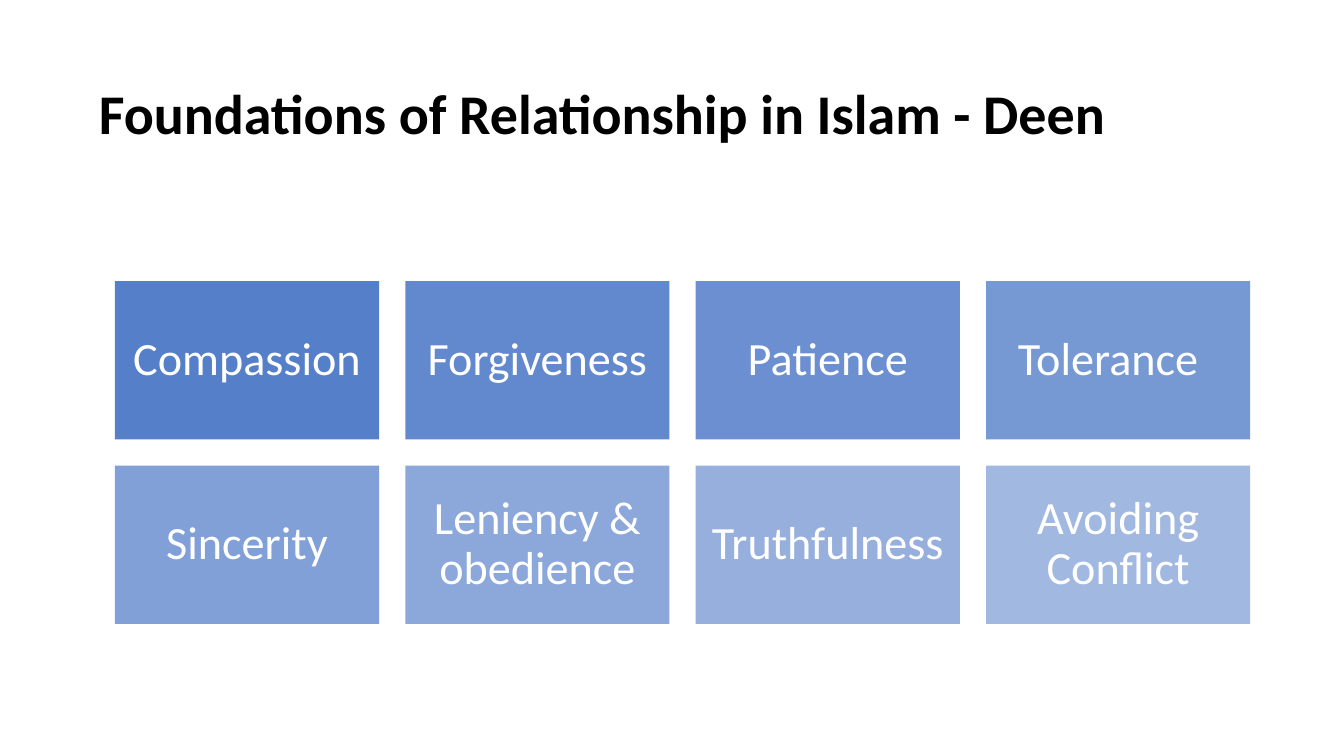
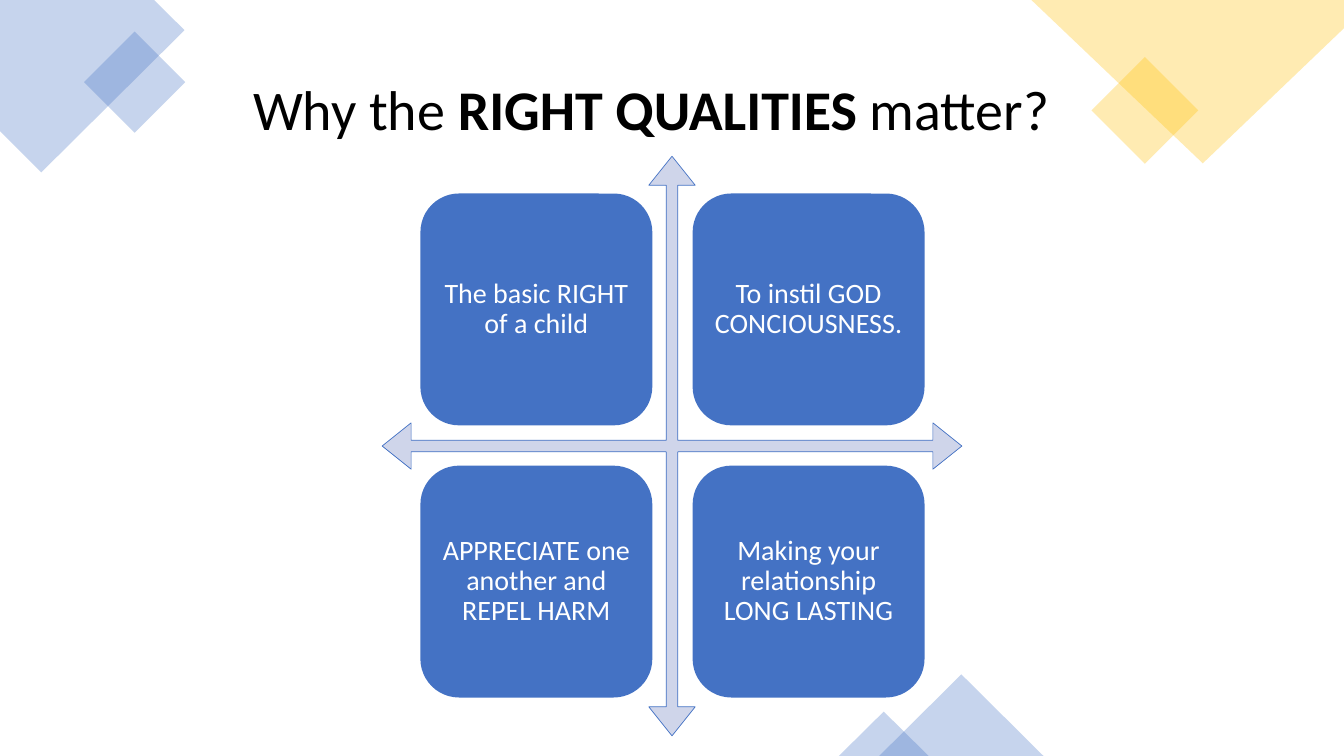
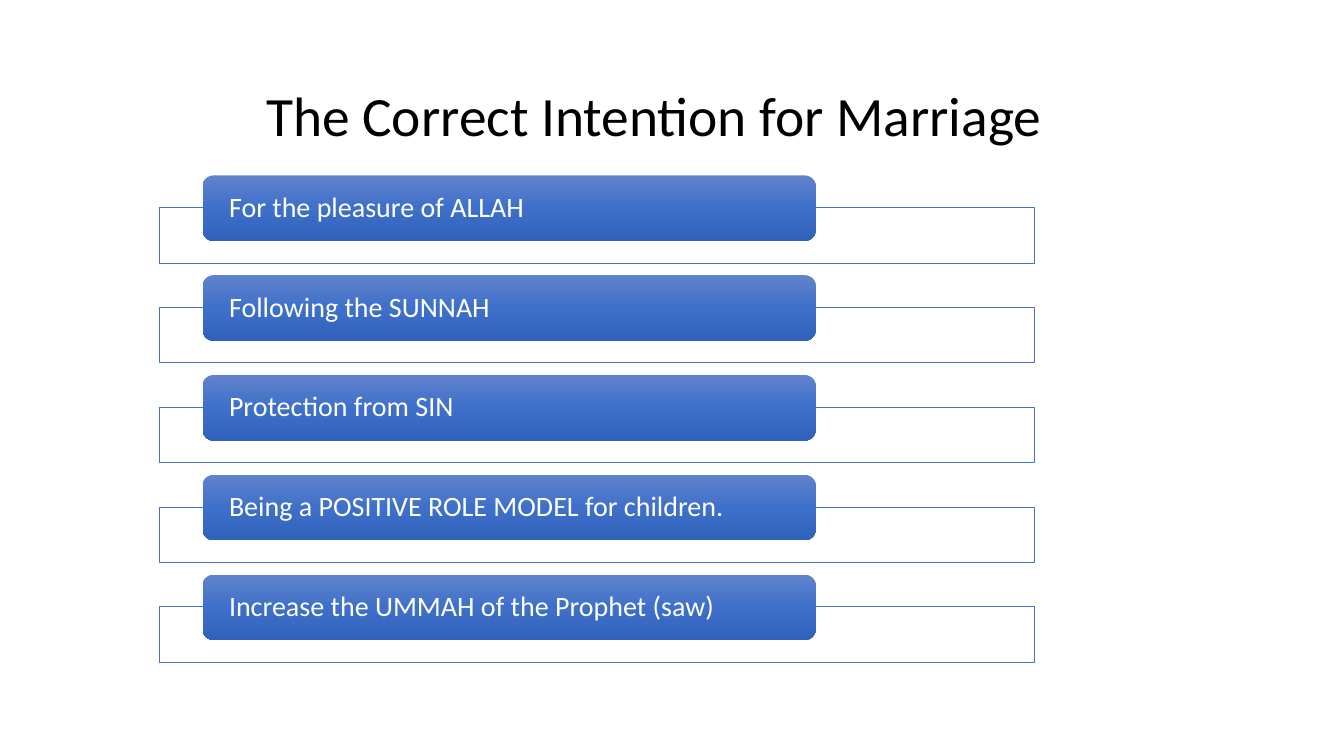
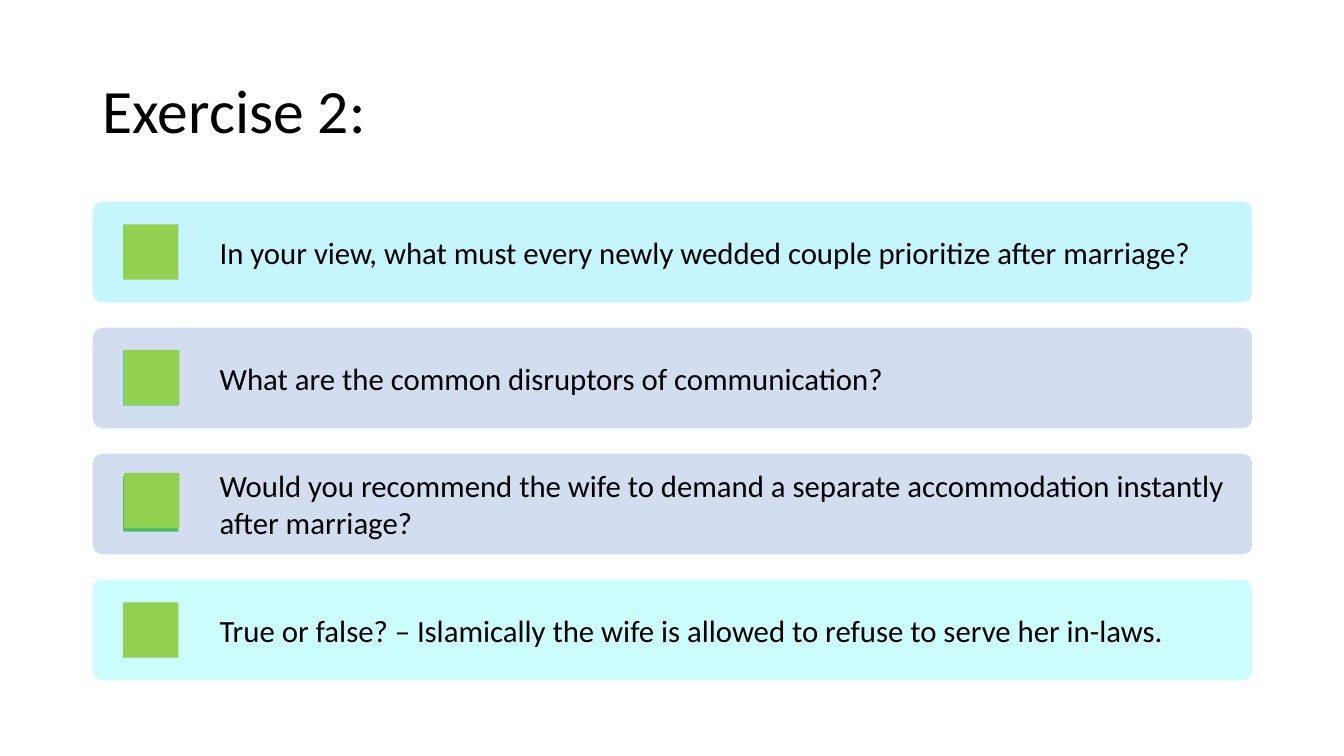
"""Build four slides on relationships, qualities, intentions and an exercise."""
from copy import deepcopy
from dataclasses import dataclass

from lxml import etree
from pptx import Presentation
from pptx.dml.color import RGBColor
from pptx.enum.shapes import MSO_SHAPE
from pptx.enum.text import MSO_ANCHOR, MSO_AUTO_SIZE, PP_ALIGN
from pptx.oxml.ns import qn
from pptx.util import Inches, Pt

RECT = MSO_SHAPE.RECTANGLE
ROUND = MSO_SHAPE.ROUNDED_RECTANGLE
ARROWS = MSO_SHAPE.QUAD_ARROW
PEAK = MSO_SHAPE.ISOSCELES_TRIANGLE
LEFT, CENTER = PP_ALIGN.LEFT, PP_ALIGN.CENTER
MIDDLE = MSO_ANCHOR.MIDDLE
NO_FIT = MSO_AUTO_SIZE.NONE


@dataclass(frozen=True)
class Theme:
    font: str = "Calibri"
    black: str = "000000"
    white: str = "FFFFFF"
    blue: str = "4472C4"
    gold: str = "FFC000"
    pale: str = "CFD5EA"
    green: str = "92D050"
    teal: str = "52CAB8"
    moss: str = "49BF64"
    aqua: str = "C5F5FD"
    mist: str = "D2DEEF"
    ice: str = "CCFEFD"
    shade: tuple = ("6183CB", "3E70CA", "3062BB")
    title: float = 40
    intent: float = 39.6
    task: float = 44
    value: float = 33
    body: float = 20
    ask: float = 22
    hair: float = 0.5
    tight: float = 0.9


T = Theme()

VALUES = [("Compassion", 0), ("Forgiveness", 0), ("Patience", 0), ("Tolerance", 0.2),
          ("Sincerity", 0), ("Leniency & obedience", 0), ("Truthfulness", 0),
          ("Avoiding Conflict", 0)]
REASONS = ["The basic RIGHT of a child", "To instil GOD CONCIOUSNESS.",
           "APPRECIATE one another and REPEL HARM",
           "Making your relationship LONG LASTING"]
AIMS = ["For the pleasure of ALLAH", "Following the SUNNAH", "Protection from SIN",
        "Being a POSITIVE ROLE MODEL for children.",
        "Increase the UMMAH of the Prophet (saw)"]
TASKS = [
    ("In your view, what must every newly wedded couple prioritize after marriage?",
     T.aqua, T.green),
    ("What are the common disruptors of communication?", T.mist, T.teal),
    ("Would you recommend the wife to demand a separate accommodation instantly "
     "after marriage?", T.mist, T.moss),
    ("True or false? – Islamically the wife is allowed to refuse to serve her in-laws.",
     T.ice, T.green),
]
COVERS = [(1.23, 3.47), (1.23, 4.69)]
CORNERS = [
    (T.blue, [(1.53, 0), (0, 0), (0, 1.3), (0.41, 1.71), (1.83, 0.3)]),
    (T.gold, [(13.33, 0), (10.23, 0), (11.93, 1.62), (13.33, 0.28)]),
]
ACCENTS = [
    (RECT, (0.98, 0.46, 0.71, 0.71), T.blue, 45),
    (RECT, (10.98, 0.72, 0.75, 0.75), T.gold, 45),
    (PEAK, (8.72, 6.69, 1.63, 0.81), T.blue, 0),
    (PEAK, (8.32, 7.06, 0.89, 0.44), T.blue, 0),
]


def rgb(code):
    return RGBColor.from_string(code)


def paint(shape, fill, line=None, alpha=None):
    shape.shadow.inherit = False
    shape.fill.solid()
    shape.fill.fore_color.rgb = rgb(fill)
    if alpha is not None:
        color = shape.element.spPr.find(".//" + qn("a:srgbClr"))
        etree.SubElement(color, qn("a:alpha")).set("val", str(round(alpha * 1000)))
    if line:
        shape.line.color.rgb = rgb(line)
        shape.line.width = Pt(T.hair)
    else:
        shape.line.fill.background()


def add(slide, kind, box, fill, line=None, alpha=None, adj=()):
    shape = slide.shapes.add_shape(kind, *map(Inches, box))
    for i, part in enumerate(adj):
        shape.adjustments[i] = part
    paint(shape, fill, line, alpha)
    return shape


def style(para, size, color, space):
    para.line_spacing = space
    for run in para.runs:
        run.font.name = T.font
        run.font.size = Pt(size)
        run.font.color.rgb = rgb(color)


def write(shape, text, size, pads, color=T.white, align=CENTER, space=T.tight):
    frame = shape.text_frame
    frame.text = text
    frame.word_wrap = True
    frame.vertical_anchor = MIDDLE
    (frame.margin_left, frame.margin_top,
     frame.margin_right, frame.margin_bottom) = map(Inches, pads)
    para = frame.paragraphs[0]
    para.alignment = align
    style(para, size, color, space)


def start(deck, box, parts, size):
    slide = deck.slides.add_slide(deck.slide_layouts[5])
    title = slide.shapes.title
    title.left, title.top, title.width, title.height = map(Inches, box)
    frame = title.text_frame
    frame.auto_size = NO_FIT
    frame.word_wrap = True
    frame.vertical_anchor = MIDDLE
    para = frame.paragraphs[0]
    para.alignment = LEFT
    for text, bold in parts:
        run = para.add_run()
        run.text = text
        run.font.bold = bold
    style(para, size, T.black, T.tight)
    return slide


def blend(shape, colors):
    fill = shape.fill
    fill.gradient()
    fill.gradient_angle = 270
    first = shape.element.spPr.find(".//" + qn("a:gs"))
    first.addnext(deepcopy(first))
    for i, (stop, color) in enumerate(zip(fill.gradient_stops, colors)):
        stop.position = i / (len(colors) - 1)
        stop.color.rgb = rgb(color)


def values(deck):
    slide = start(deck, (0.88, 0.5, 11.57, 1.3),
                  [("Foundations of Relationship in Islam - Deen", True)], T.title)
    wide, high, gap, pad = 2.62, 1.57, 0.26, 0.14
    for i, (text, extra) in enumerate(VALUES):
        row, col = divmod(i, 4)
        box = (1.14 + col * (wide + gap), 2.79 + row * (high + gap), wide, high)
        tile = add(slide, RECT, box, T.blue, alpha=90 - 40 * i / (len(VALUES) - 1))
        write(tile, text, T.value, (pad, pad, pad + extra, pad))


def reasons(deck):
    slide = start(deck, (2.41, 0.68, 8.19, 0.87),
                  [("Why the ", False), ("RIGHT QUALITIES ", True), ("matter?", False)],
                  T.title)
    for color, points in CORNERS:
        first, *rest = [(Inches(x), Inches(y)) for x, y in points]
        pen = slide.shapes.build_freeform(*first)
        pen.add_line_segments(rest)
        paint(pen.convert_to_shape(), color, alpha=30)
    for kind, box, color, turn in ACCENTS:
        add(slide, kind, box, color, alpha=30).rotation = turn
    add(slide, ARROWS, (3.79, 1.55, 5.75, 5.75), T.pale, T.blue, adj=(0.02, 0.04, 0.05))
    side, step = 2.3, 2.7
    for i, text in enumerate(REASONS):
        row, col = divmod(i, 2)
        card = add(slide, ROUND, (4.17 + col * step, 1.92 + row * step, side, side), T.blue)
        write(card, text, T.body, (0.08,) * 4)


def aims(deck):
    slide = start(deck, (2.54, 0.68, 8.25, 1),
                  [("The Correct Intention for Marriage", False)], T.intent)
    for i, text in enumerate(AIMS):
        top = 1.74 + i * 0.99
        add(slide, RECT, (1.58, top + 0.32, 8.68, 0.55), T.white, T.blue)
        label = add(slide, ROUND, (2.01, top, 6.08, 0.65), T.blue)
        blend(label, T.shade)
        write(label, text, T.body, (0.23, 0, 0.23, 0), align=LEFT)


def tasks(deck):
    slide = start(deck, (0.92, 0.4, 11.5, 1.45), [("Exercise 2:", False)], T.task)
    side = 0.55
    for i, (text, back, mark) in enumerate(TASKS):
        top = 2 + i * 1.25
        bar = add(slide, ROUND, (0.92, top, 11.5, 1), back, adj=(0.1,))
        write(bar, text, T.ask, (1.23, 0.08, 0.08, 0.08), T.black, LEFT, 1.0)
        add(slide, RECT, (1.22, top + (1 - side) / 2, side, side), mark)
    for left, top in COVERS:
        add(slide, RECT, (left, top, side, side), T.green)


def main():
    deck = Presentation()
    deck.slide_width, deck.slide_height = Inches(13.33), Inches(7.5)
    for build in (values, reasons, aims, tasks):
        build(deck)
    deck.save("out.pptx")


if __name__ == "__main__":
    main()
